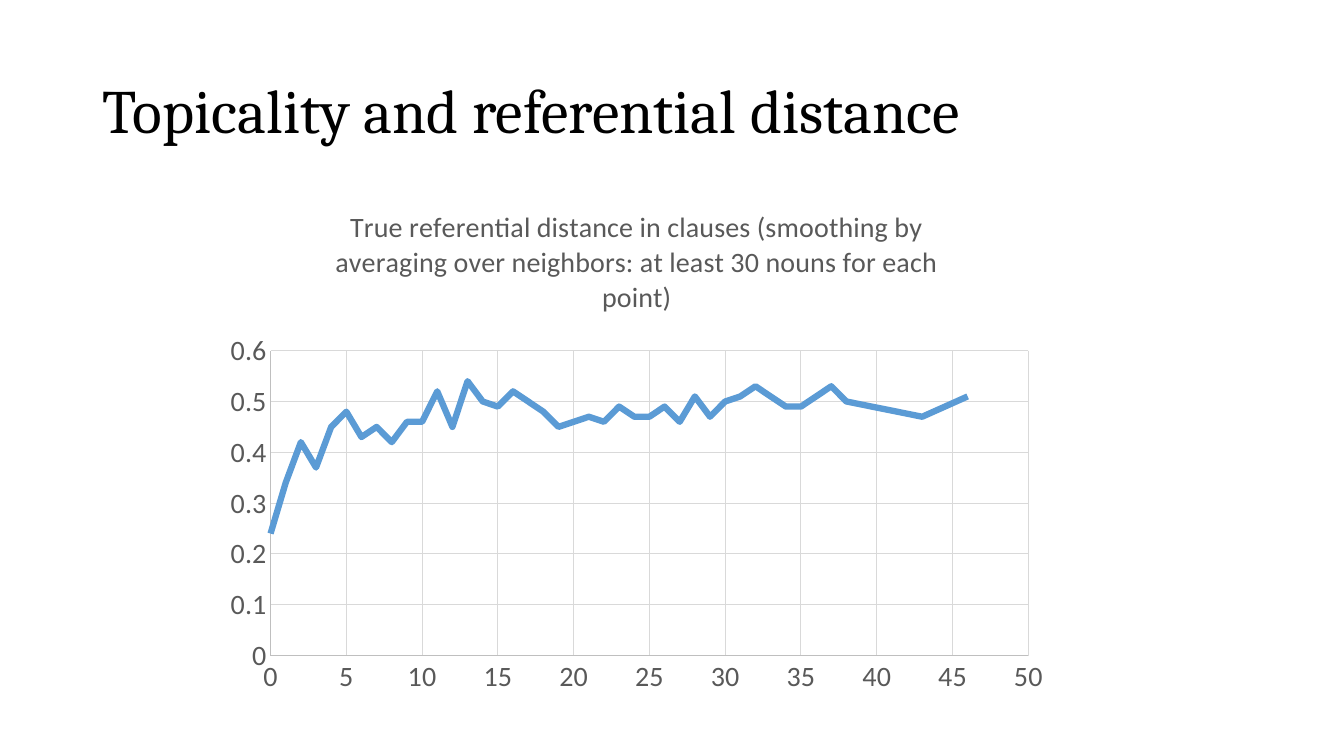
from dataclasses import dataclass

from pptx import Presentation
from pptx.chart.data import XyChartData
from pptx.dml.color import RGBColor
from pptx.enum.chart import XL_CHART_TYPE, XL_MARKER_STYLE, XL_TICK_MARK
from pptx.enum.text import MSO_ANCHOR, PP_ALIGN
from pptx.util import Inches, Pt

SCATTER = XL_CHART_TYPE.XY_SCATTER_LINES_NO_MARKERS
NO_MARKER = XL_MARKER_STYLE.NONE
NO_TICK = XL_TICK_MARK.NONE
MIDDLE = MSO_ANCHOR.MIDDLE
LEFT, CENTER = PP_ALIGN.LEFT, PP_ALIGN.CENTER
TITLE_ONLY = 5


@dataclass(frozen=True)
class Theme:
    heading_font: str = "Cambria"
    body_font: str = "Calibri"
    heading_size: int = 44
    chart_size: int = 20
    heading: str = "000000"
    chart_text: str = "595959"
    axis: str = "BFBFBF"
    grid: str = "D9D9D9"
    curve: str = "5B9BD5"
    thin: float = 0.75
    thick: float = 4.5


THEME = Theme()

CHART_TITLE = (
    "True referential distance in clauses (smoothing by averaging over "
    "neighbors: at least 30 nouns for each point)"
)
DISTANCES = [*range(33), 34, 35, 37, 38, 43, 46]
TOPICALITY = [
    0.24, 0.34, 0.42, 0.37, 0.45, 0.48, 0.43, 0.45, 0.42, 0.46,
    0.46, 0.52, 0.45, 0.54, 0.5, 0.49, 0.52, 0.5, 0.48, 0.45,
    0.46, 0.47, 0.46, 0.49, 0.47, 0.47, 0.49, 0.46, 0.51, 0.47,
    0.5, 0.51, 0.53, 0.49, 0.49, 0.53, 0.5, 0.47, 0.51,
]


def format_font(font, *, name, size, color):
    font.name = name
    font.size = Pt(size)
    font.bold = False
    font.color.rgb = RGBColor.from_string(color)


def write_text(tf, text, *, name, size, color, align=LEFT, spacing=None):
    p = tf.paragraphs[0]
    p.alignment = align
    p.line_spacing = spacing
    r = p.add_run()
    r.text = text
    format_font(r.font, name=name, size=size, color=color)


def format_line(line, color, width):
    line.color.rgb = RGBColor.from_string(color)
    line.width = Pt(width)


def add_title(s, text):
    sp = s.shapes.title
    sp.left, sp.top = Inches(0.92), Inches(0.4)
    sp.width, sp.height = Inches(11.5), Inches(1.45)
    tf = sp.text_frame
    tf.word_wrap = True
    tf.vertical_anchor = MIDDLE
    write_text(tf, text, name=THEME.heading_font, size=THEME.heading_size,
               color=THEME.heading, spacing=0.9)


def format_axis(axis, maximum, step, number_format):
    axis.minimum_scale = 0
    axis.maximum_scale = maximum
    axis.major_unit = step
    axis.major_tick_mark = NO_TICK
    axis.minor_tick_mark = NO_TICK
    axis.has_major_gridlines = True
    format_line(axis.major_gridlines.format.line, THEME.grid, THEME.thin)
    format_line(axis.format.line, THEME.axis, THEME.thin)
    labels = axis.tick_labels
    labels.number_format = number_format
    labels.number_format_is_linked = False
    format_font(labels.font, name=THEME.body_font, size=THEME.chart_size,
                color=THEME.chart_text)


def add_distance_chart(s):
    data = XyChartData()
    points = data.add_series("Series 1")
    for x, y in zip(DISTANCES, TOPICALITY):
        points.add_data_point(x, y)
    chart = s.shapes.add_chart(SCATTER, Inches(2.12), Inches(1.85),
                               Inches(8.39), Inches(5.14), data).chart
    chart.has_legend = False
    chart.has_title = True
    chart.chart_title.include_in_layout = False
    write_text(chart.chart_title.text_frame, CHART_TITLE,
               name=THEME.body_font, size=THEME.chart_size,
               color=THEME.chart_text, align=CENTER)
    format_axis(chart.category_axis, 50, 5, "General")
    format_axis(chart.value_axis, 0.6, 0.1, "General")
    plot = chart.plots[0]
    plot.vary_by_categories = False
    series = plot.series[0]
    series.smooth = False
    series.marker.style = NO_MARKER
    format_line(series.format.line, THEME.curve, THEME.thick)


def main():
    prs = Presentation()
    prs.slide_width, prs.slide_height = Inches(13.33), Inches(7.5)
    s = prs.slides.add_slide(prs.slide_layouts[TITLE_ONLY])
    add_title(s, "Topicality and referential distance")
    add_distance_chart(s)
    prs.save("out.pptx")


if __name__ == "__main__":
    main()
